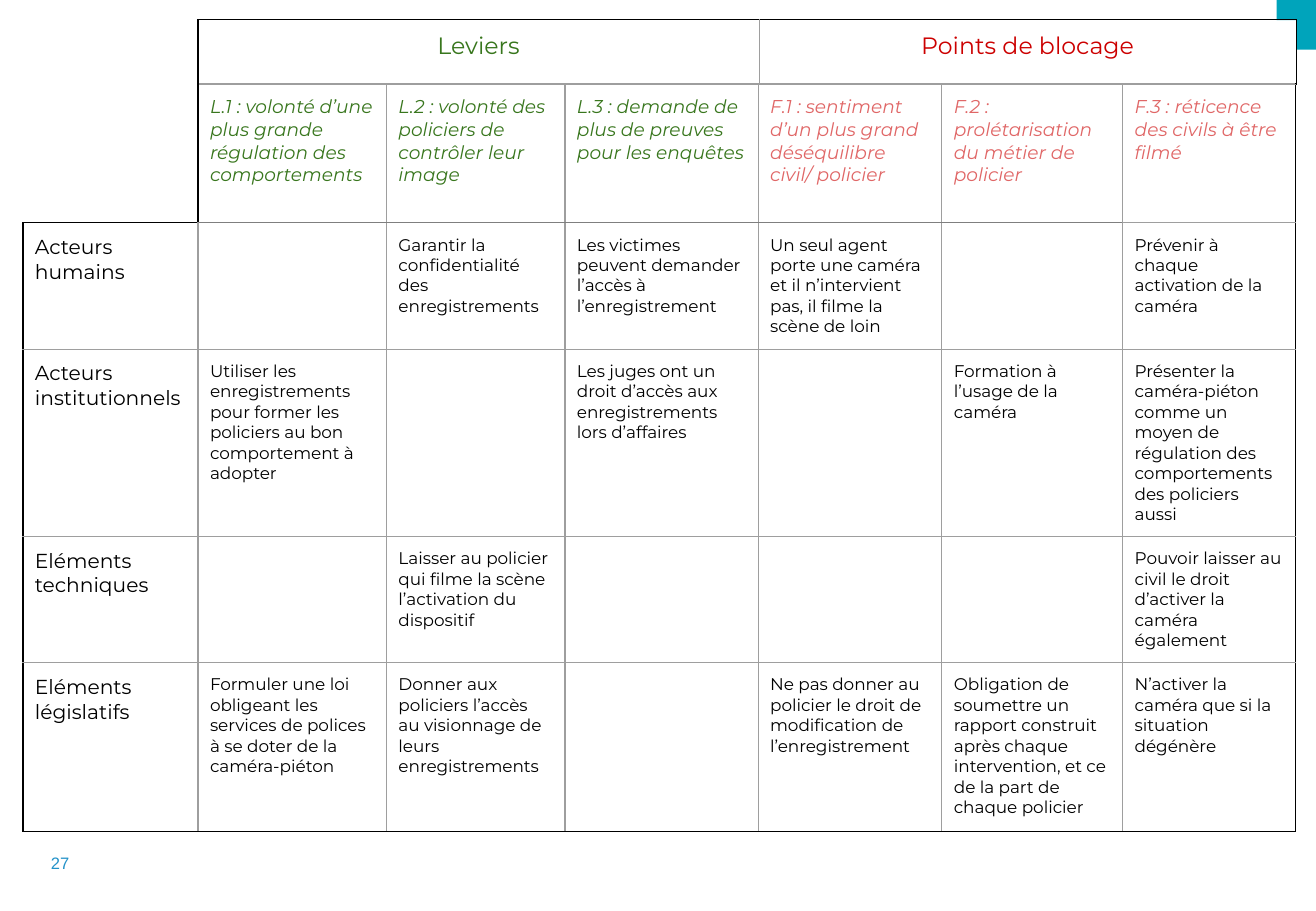
import pptx
import pptx.dml.color
import pptx.enum.shapes
import pptx.enum.text
import pptx.util
from lxml import etree
from pptx.oxml.ns import qn
from pptx.util import Cm

THEME = {
    "font": "Montserrat", "number_font": "Arial",
    "black": "000000", "white": "FFFFFF", "grey": "9E9E9E", "dark_grey": "7F7F7F",
    "teal": "00A4BB", "blue": "2392C9",
    "green": "38761D", "red": "CC0000", "pink": "E06666",
    "heading": 14, "row_label": 12, "column_label": 11, "body": 10, "number": 9.8,
}


def write(frame, text, size, color, font="font", italic=False, align="LEFT"):
    frame.text = text
    paragraph = frame.paragraphs[0]
    paragraph.alignment = getattr(pptx.enum.text.PP_ALIGN, align)
    paragraph.font.name = THEME[font]
    paragraph.font.size = pptx.util.Pt(THEME[size])
    paragraph.font.color.rgb = pptx.dml.color.RGBColor.from_string(THEME[color])
    paragraph.font.italic = italic


def frame_cell(cell, left="grey", right="grey", top="grey", bottom="grey"):
    cell.margin_left = cell.margin_right = Cm(0.25)
    cell.margin_top = cell.margin_bottom = Cm(0.25)
    properties = cell._tc.get_or_add_tcPr()
    for side, color in zip("LRTB", (left, right, top, bottom)):
        line = etree.SubElement(properties, qn(f"a:ln{side}"), w="9525")
        fill = etree.SubElement(line, qn("a:solidFill"))
        etree.SubElement(fill, qn("a:srgbClr"), val=THEME[color])
    cell.fill.background()


presentation = pptx.Presentation()
presentation.slide_width = Cm(27.51)
presentation.slide_height = Cm(19.05)
slide = presentation.slides.add_slide(presentation.slide_layouts[6])

# Corner ornament
corner = slide.shapes.add_shape(
    pptx.enum.shapes.MSO_SHAPE.CORNER, Cm(26.59), Cm(0.1), Cm(1.04), Cm(0.84))
corner.rotation = 270
corner._element.spPr.find(qn("a:xfrm")).set("flipH", "1")
corner.shadow.inherit = False
corner.fill.solid()
corner.fill.fore_color.rgb = pptx.dml.color.RGBColor.from_string(THEME["teal"])
corner.line.fill.background()

# Page number
number = slide.shapes.add_textbox(Cm(0.36), Cm(17.7), Cm(1.09), Cm(0.69)).text_frame
number.word_wrap = True
number.margin_right = 0
number.vertical_anchor = pptx.enum.text.MSO_ANCHOR.MIDDLE
write(number, "27", "number", "blue", font="number_font", align="RIGHT")

# Main table
COLUMN_WIDTHS = [3.66, 3.94, 3.73, 4.04, 3.84, 3.78, 3.61]
ROW_HEIGHTS = [2.91, 2.64, 3.92, 2.64, 3.52]
ROWS = [
    ["",
     "L.1 : volonté d’une plus grande régulation des comportements",
     "L.2 : volonté des policiers de contrôler leur image",
     "L.3 : demande de plus de preuves pour les enquêtes",
     "F.1 : sentiment d’un plus grand déséquilibre civil/ policier",
     "F.2 : prolétarisation du métier de policier",
     "F.3 : réticence des civils à être filmé"],
    ["Acteurs humains",
     "",
     "Garantir la confidentialité des enregistrements",
     "Les victimes peuvent demander l’accès à l’enregistrement",
     "Un seul agent porte une caméra et il n’intervient pas, il filme la scène de loin",
     "",
     "Prévenir à chaque activation de la caméra"],
    ["Acteurs institutionnels",
     "Utiliser les enregistrements pour former les policiers au bon comportement à adopter",
     "",
     "Les juges ont un droit d’accès aux enregistrements lors d’affaires",
     "",
     "Formation à l’usage de la caméra",
     "Présenter la caméra-piéton comme un moyen de régulation des comportements "
     "des policiers aussi"],
    ["Eléments techniques",
     "",
     "Laisser au policier qui filme la scène l’activation du dispositif",
     "",
     "",
     "",
     "Pouvoir laisser au civil le droit d’activer la caméra également"],
    ["Eléments législatifs",
     "Formuler une loi obligeant les services de polices à se doter de la caméra-piéton",
     "Donner aux policiers l’accès au visionnage de leurs enregistrements",
     "",
     "Ne pas donner au policier le droit de modification de l’enregistrement",
     "Obligation de soumettre un rapport construit après chaque intervention, "
     "et ce de la part de chaque policier",
     "N’activer la caméra que si la situation dégénère"],
]
last_row, last_column = len(ROWS) - 1, len(COLUMN_WIDTHS) - 1
header_rule = ["black"] + ["dark_grey"] * (last_column - 1) + ["grey"]
matrix = slide.shapes.add_table(
    len(ROWS), len(COLUMN_WIDTHS), Cm(0.48), Cm(1.75),
    Cm(sum(COLUMN_WIDTHS)), Cm(sum(ROW_HEIGHTS))).table
matrix.first_row = matrix.horz_banding = False
for column, width in zip(matrix.columns, COLUMN_WIDTHS):
    column.width = Cm(width)

for r, texts in enumerate(ROWS):
    matrix.rows[r].height = Cm(ROW_HEIGHTS[r])
    for c, text in enumerate(texts):
        cell = matrix.cell(r, c)
        # Black outline around the table, darker rule under the column labels
        borders = {}
        if r == 0:
            borders["bottom"] = header_rule[c]
        if r == 1:
            borders["top"] = header_rule[c]
        if r == last_row:
            borders["bottom"] = "black"
        if c == 0 or (r, c) == (0, 1):
            borders["left"] = "black"
        if c == last_column:
            borders["right"] = "black"
        if (r, c) == (0, 0):
            borders.update(left="white", top="white", right="black")
        frame_cell(cell, **borders)
        if not text:
            continue
        if r == 0:
            write(cell.text_frame, text, "column_label",
                  "green" if c <= 3 else "pink", italic=True)
        else:
            write(cell.text_frame, text, "row_label" if c == 0 else "body", "black")

# Heading table
HEADINGS = [("Leviers", 11.73, "green"), ("Points de blocage", 11.23, "red")]
headings = slide.shapes.add_table(
    1, 2, Cm(4.14), Cm(0.41), Cm(22.96), Cm(1.35)).table
headings.first_row = headings.horz_banding = False
for c, (text, width, color) in enumerate(HEADINGS):
    headings.columns[c].width = Cm(width)
    cell = headings.cell(0, c)
    frame_cell(cell, top="black", **{("left", "right")[c]: "black"})
    write(cell.text_frame, text, "heading", color, align="CENTER")

presentation.save("out.pptx")
